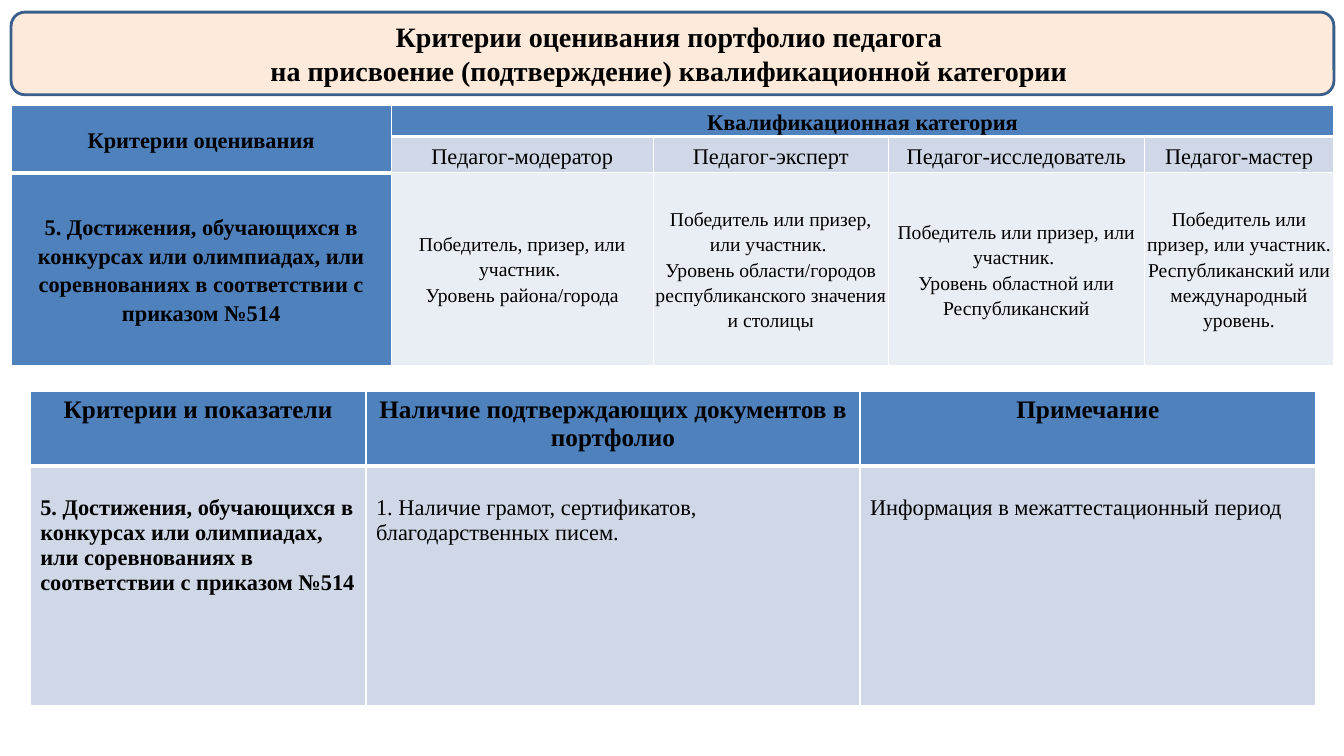
"""Build a slide with the criteria for grading a teacher portfolio."""
from dataclasses import dataclass

from lxml import etree
from pptx import Presentation
from pptx.dml.color import RGBColor
from pptx.enum.shapes import MSO_SHAPE
from pptx.enum.text import MSO_ANCHOR, PP_ALIGN
from pptx.oxml.ns import qn
from pptx.util import Inches, Pt

ROUND = MSO_SHAPE.ROUNDED_RECTANGLE
MIDDLE, TOP = MSO_ANCHOR.MIDDLE, MSO_ANCHOR.TOP
CENTER, LEFT = PP_ALIGN.CENTER, PP_ALIGN.LEFT


@dataclass(frozen=True)
class Theme:
    """Colours, font and type sizes of the slide."""
    font: str = "Times New Roman"
    ink: str = "000000"
    cream: str = "FDEADA"
    edge: str = "3A5F8C"
    white: str = "FFFFFF"
    blue: str = "4F81BD"
    pale: str = "D0D8E8"
    light: str = "E9EDF4"
    title: int = 20
    head: int = 18
    body: int = 16
    small: int = 14


@dataclass(frozen=True)
class Look:
    """Style of one kind of table cell."""
    fill: str
    size: int
    bold: bool = False
    align: int = CENTER
    anchor: int = MIDDLE
    side: float = 0.01
    top: float = 0.01
    lines: float = 1.15
    after: int = 1
    rule: int = 1


class Board:
    """Holds the theme and the current slide."""

    def __init__(self, deck, theme):
        """Add a blank slide."""
        self.theme = theme
        self.slide = deck.slides.add_slide(deck.slide_layouts[6])

    def label(self, frame, text, size, bold, align):
        """Fill a text frame, one paragraph a line."""
        frame.text = text
        for para in frame.paragraphs:
            para.alignment = align
            font = para.font
            font.name, font.size, font.bold = self.theme.font, Pt(size), bold
            font.color.rgb = RGBColor.from_string(self.theme.ink)

    def banner(self, box, text):
        """Draw the rounded title box."""
        shape = self.slide.shapes.add_shape(ROUND, *map(Inches, box))
        shape.shadow.inherit = False
        shape.fill.solid()
        shape.fill.fore_color.rgb = RGBColor.from_string(self.theme.cream)
        shape.line.color.rgb = RGBColor.from_string(self.theme.edge)
        shape.line.width = Pt(2)
        shape.text_frame.vertical_anchor = MIDDLE
        self.label(shape.text_frame, text, self.theme.title, True, CENTER)

    def border(self, cell, base):
        """Rule a cell in white, with its own width at the base."""
        props = cell._tc.get_or_add_tcPr()
        widths = {"a:lnL": 1, "a:lnR": 1, "a:lnT": 1, "a:lnB": base}
        for spot, (tag, width) in enumerate(widths.items()):
            line = etree.Element(qn(tag), w=str(Pt(width)))
            fill = etree.SubElement(line, qn("a:solidFill"))
            etree.SubElement(fill, qn("a:srgbClr"), val=self.theme.white)
            props.insert(spot, line)

    def cell(self, cell, text, look):
        """Style and fill one table cell."""
        self.label(cell.text_frame, text, look.size, look.bold, look.align)
        for para in cell.text_frame.paragraphs:
            para.line_spacing = look.lines
            para.space_after = Pt(look.after)
        cell.vertical_anchor = look.anchor
        cell.margin_left = cell.margin_right = Inches(look.side)
        cell.margin_top = Inches(look.top)
        cell.margin_bottom = Inches(min(look.top, 0.05))
        cell.fill.solid()
        cell.fill.fore_color.rgb = RGBColor.from_string(look.fill)
        self.border(cell, look.rule)

    def table(self, left, top, cols, rows, cells, spans=()):
        """Draw a table from rows of (text, look) pairs."""
        box = map(Inches, (left, top, sum(cols), sum(rows)))
        grid = self.slide.shapes.add_table(len(rows), len(cols), *box).table
        grid.first_row = grid.horz_banding = False
        for col, width in zip(grid.columns, cols):
            col.width = Inches(width)
        for row, height in zip(grid.rows, rows):
            row.height = Inches(height)
        for y, line in enumerate(cells):
            for x, (text, look) in enumerate(line):
                self.cell(grid.cell(y, x), text, look)
        for start, end in spans:
            grid.cell(*start).merge(grid.cell(*end))


def main():
    """Build and save the slide."""
    deck = Presentation()
    deck.slide_width, deck.slide_height = Inches(13.33), Inches(7.5)
    theme = Theme()
    board = Board(deck, theme)
    board.banner(
        (0.11, 0.12, 13.12, 0.82),
        "Критерии оценивания портфолио педагога \n"
        "на присвоение (подтверждение) квалификационной категории ")

    goal = ("5. Достижения, обучающихся в конкурсах или олимпиадах, "
            "или соревнованиях в соответствии с приказом №514")
    head = Look(theme.blue, theme.body, True, rule=3)
    label = Look(theme.blue, theme.body, True)
    grade = Look(theme.pale, theme.body)
    level = Look(theme.light, theme.small)
    grades = ("Педагог-модератор", "Педагог-эксперт",
              "Педагог-исследователь", "Педагог-мастер")
    levels = (
        "Победитель, призер, или участник. \nУровень района/города",
        "Победитель или призер, или участник. \n"
        "Уровень области/городов республиканского значения и столицы",
        "Победитель или призер, или участник. \n"
        "Уровень областной или Республиканский",
        "Победитель или призер, или участник.\n"
        "Республиканский или международный уровень.")
    board.table(
        0.11, 1.05, (3.77, 2.6, 2.33, 2.54, 1.88), (0.25, 0.36, 1.91),
        [[("Критерии оценивания", head), ("Квалификационная категория", head)]
         + [("", head)] * 3,
         [("", head)] + [(text, grade) for text in grades],
         [(goal, label)] + [(text, level) for text in levels]],
        [((0, 0), (1, 0)), ((0, 1), (0, 4))])

    plain = {"side": 0.1, "anchor": TOP, "lines": 1.0, "after": 0}
    head = Look(theme.blue, theme.head, True, top=0.05, rule=3, **plain)
    note = Look(theme.pale, theme.body, align=LEFT, top=0.3, **plain)
    label = Look(theme.pale, theme.body, True, LEFT, top=0.3, **plain)
    heads = ("Критерии и показатели",
             "Наличие подтверждающих документов в портфолио", "Примечание")
    board.table(
        0.3, 3.88, (3.33, 4.9, 4.52), (0.74, 2.38),
        [[(text, head) for text in heads],
         [(goal, label),
          ("1. Наличие грамот, сертификатов, благодарственных писем.", note),
          ("Информация в межаттестационный период", note)]])
    deck.save("out.pptx")


if __name__ == "__main__":
    main()
